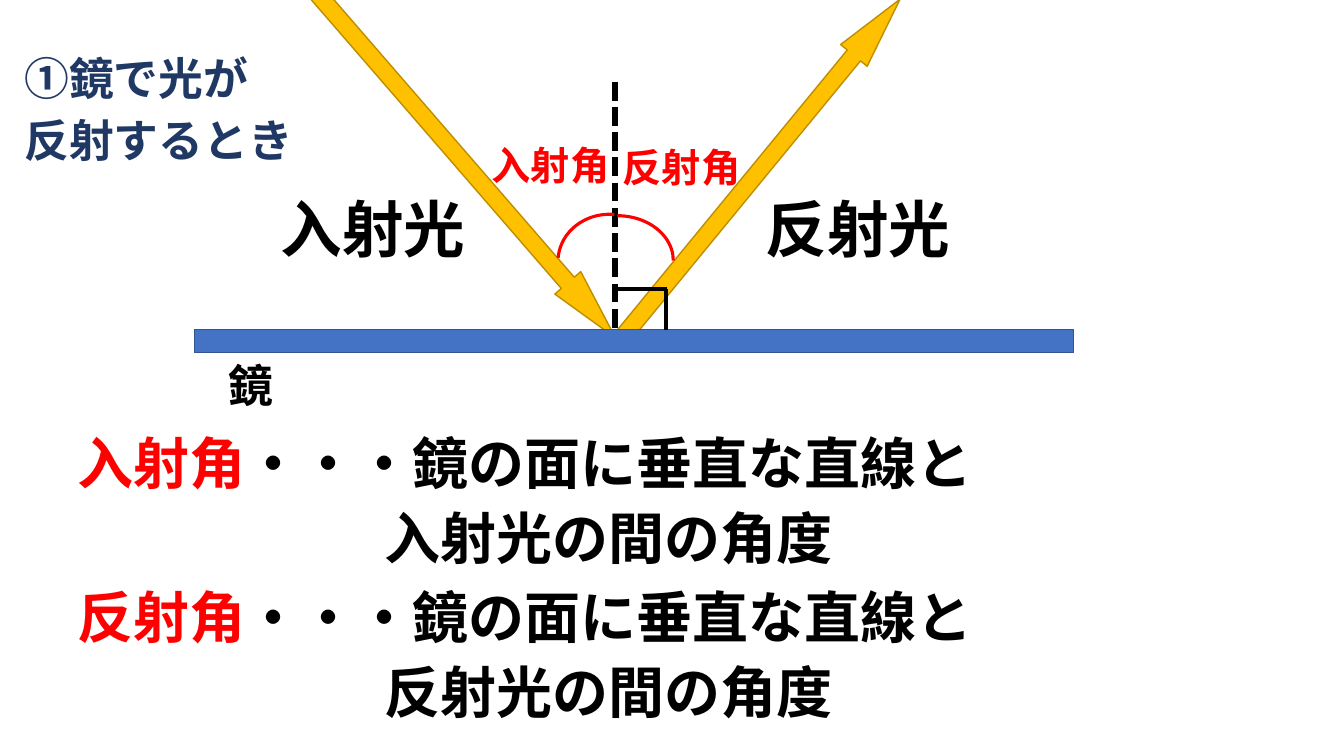
from lxml import etree
from pptx import Presentation
from pptx.dml.color import RGBColor
from pptx.enum.dml import MSO_LINE
from pptx.enum.shapes import MSO_CONNECTOR, MSO_SHAPE
from pptx.enum.text import MSO_ANCHOR, MSO_AUTO_SIZE, PP_ALIGN
from pptx.oxml.ns import qn
from pptx.util import Pt

STRAIGHT = MSO_CONNECTOR.STRAIGHT
DOWN_ARROW, ARC, RECTANGLE = MSO_SHAPE.DOWN_ARROW, MSO_SHAPE.ARC, MSO_SHAPE.RECTANGLE
SQUARE_DASH = MSO_LINE.SQUARE_DOT
LEFT, CENTER = PP_ALIGN.LEFT, PP_ALIGN.CENTER
TOP = MSO_ANCHOR.TOP
NO_AUTOFIT = MSO_AUTO_SIZE.NONE

BLACK = RGBColor(0x00, 0x00, 0x00)
RED = RGBColor(0xFF, 0x00, 0x00)
NAVY = RGBColor(0x20, 0x38, 0x64)
LIGHT = RGBColor(0xFF, 0xC0, 0x00)
LIGHT_EDGE = RGBColor(0xBD, 0x8E, 0x00)
MIRROR = RGBColor(0x44, 0x72, 0xC4)
MIRROR_EDGE = RGBColor(0x32, 0x54, 0x91)


class Diagram:
    """Style and drawing methods for one slide; all lengths are in points."""

    font = "Noto Sans CJK JP"

    def __init__(self, slide):
        self.slide = slide
        self.shapes = slide.shapes

    def style(self, paragraph, size, color, align, spaced=True):
        paragraph.alignment = align
        if spaced:
            paragraph.line_spacing = 0.9
            paragraph.space_before = Pt(10)
        font = paragraph.font
        font.name, font.size, font.bold = self.font, Pt(size), True
        font.color.rgb = color
        east_asian = etree.SubElement(font._element, qn("a:ea"))
        east_asian.set("typeface", self.font)

    def text(self, box, lines, size, color=BLACK, align=CENTER,
             holder=None, wrap=True, spaced=True):
        """Write lines into a placeholder, or into a new text box."""
        place = [Pt(length) for length in box]
        if holder is None:
            holder = self.shapes.add_textbox(*place)
        else:
            holder.left, holder.top, holder.width, holder.height = place
        frame = holder.text_frame
        frame.auto_size = NO_AUTOFIT
        frame.word_wrap = wrap
        frame.vertical_anchor = TOP
        frame.text = "\n".join(lines)
        for paragraph in frame.paragraphs:
            self.style(paragraph, size, color, align, spaced)
        return frame

    def definition(self, top, term, ray):
        lines = ["・・・鏡の面に垂直な直線と", f"{ray}の間の角度"]
        frame = self.text((41.8, top, 666, 108.7), lines, 40)
        opening, ending = frame.paragraphs
        rest = opening.runs[0].text
        opening.runs[0].text = term
        opening.runs[0].font.color.rgb = RED
        opening.add_run().text = rest
        ending._p.get_or_add_pPr().set("marL", str(Pt(120)))

    def shape(self, kind, box, edge, width, fill=None, rotation=0):
        shape = self.shapes.add_shape(kind, *[Pt(length) for length in box])
        shape.shadow.inherit = False
        shape.rotation = rotation
        shape.line.color.rgb = edge
        shape.line.width = Pt(width)
        if fill is None:
            shape.fill.background()
        else:
            shape.fill.solid()
            shape.fill.fore_color.rgb = fill
        return shape

    def ray(self, box, rotation):
        arrow = self.shape(DOWN_ARROW, box, LIGHT_EDGE, 1, LIGHT, rotation)
        arrow.adjustments[0] = 0.5
        arrow.adjustments[1] = 2.122

    def line(self, x1, y1, x2, y2, width, dash=None):
        line = self.shapes.add_connector(STRAIGHT, Pt(x1), Pt(y1), Pt(x2), Pt(y2))
        line.line.color.rgb = BLACK
        line.line.width = Pt(width)
        if dash is not None:
            line.line.dash_style = dash
        etree.SubElement(line._element.spPr, qn("a:effectLst"))


def main():
    deck = Presentation()
    deck.slide_width, deck.slide_height = Pt(960), Pt(540)
    diagram = Diagram(deck.slides.add_slide(deck.slide_layouts[0]))
    heading, incident_label = diagram.slide.placeholders

    diagram.text((10.1, 36.7, 251.3, 108.7), ["①鏡で光が", "反射するとき"], 32,
                 NAVY, LEFT, holder=heading)
    diagram.text((189.4, 139, 154, 41), ["入射光"], 44, holder=incident_label)
    diagram.ray((319.7, -47.5, 24.5, 329), 319.1)
    diagram.ray((529.9, -36.7, 24.5, 317.5), 219.4)
    diagram.text((532, 139, 162, 41), ["反射光"], 44)
    diagram.text((102.2, 256.3, 154, 41), ["鏡"], 32)

    mirror_top = 235.4
    diagram.line(439.2, 58.3, 439.2, mirror_top, 4.5, SQUARE_DASH)
    diagram.shape(ARC, (401, 154.1, 80, 64), RED, 2.25)
    diagram.shape(ARC, (401.8, 149.8, 68.4, 74.9), RED, 2.25, rotation=274.7)
    for left, top, angle in ((344.2, 97.2, "入射角"), (437.8, 98.6, "反射角")):
        diagram.text((left, top, 99.4, 41), [angle], 28, RED, LEFT,
                     wrap=False, spaced=False)
    diagram.shape(RECTANGLE, (139, mirror_top, 627.8, 16.6), MIRROR_EDGE, 1, MIRROR)

    corner_x, corner_y = 476, 206.6
    diagram.line(437.8, corner_y, corner_x + 0.7, corner_y, 3)
    diagram.line(corner_x, corner_y, corner_x, mirror_top, 3)

    diagram.definition(308.2, "入射角", "入射光")
    diagram.definition(418.3, "反射角", "反射光")
    deck.save("out.pptx")


if __name__ == "__main__":
    main()
